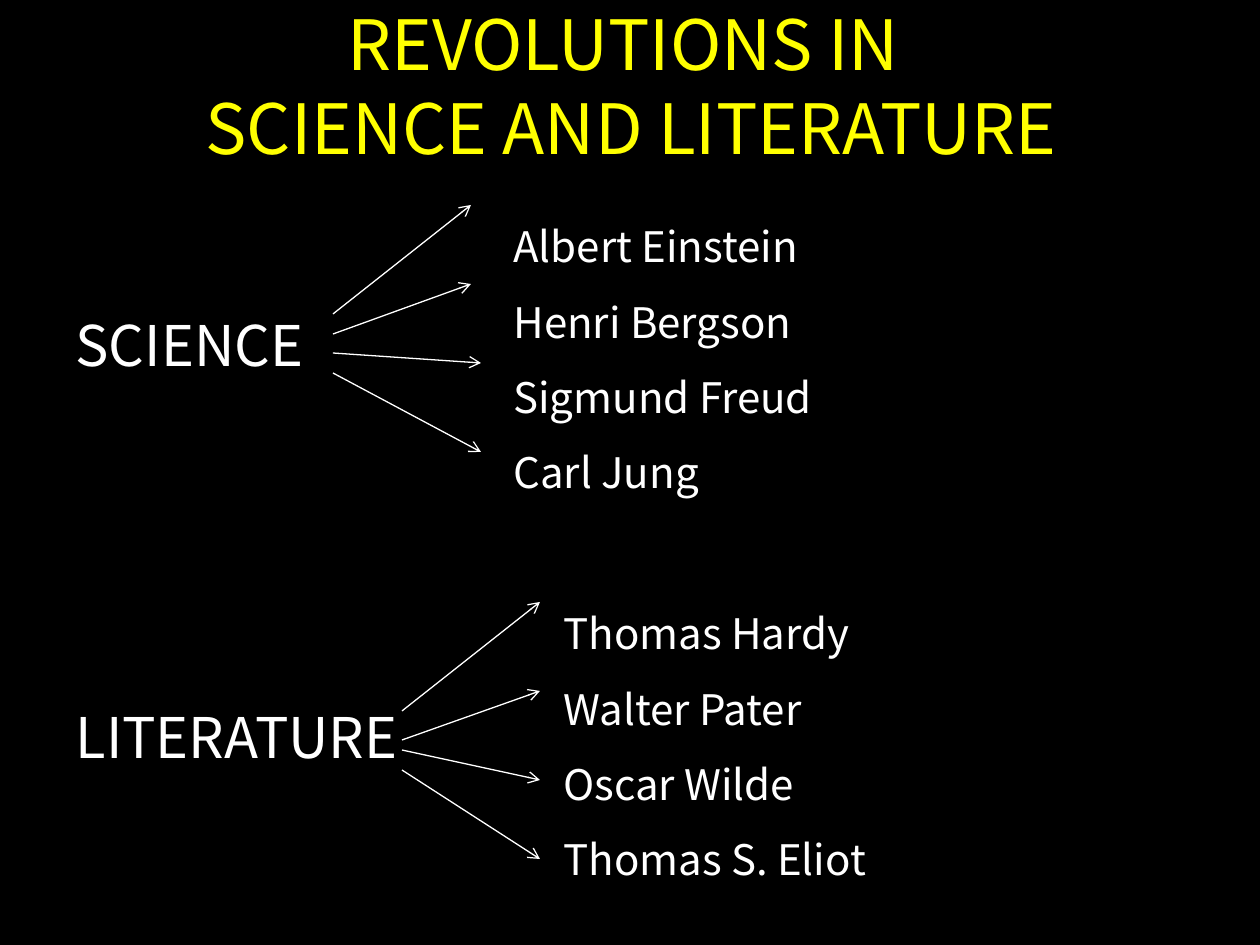
from lxml import etree
from pptx import Presentation, util as u
from pptx.dml.color import RGBColor
from pptx.enum import shapes, text
from pptx.oxml.ns import qn

FONT = "Noto Sans CJK TC"
BLACK, WHITE, YELLOW = "000000", "FFFFFF", "FFFF00"


def px(n):
    """Turn pixels (126 to the inch) into EMU."""
    return u.Emu(round(n * 914400 / 126))


def rgb(code):
    return RGBColor.from_string(code)


class Deck:
    """Holds the style and the current slide."""

    def __init__(self):
        self.prs = Presentation()
        self.prs.slide_width, self.prs.slide_height = px(1260), px(945)
        self.slide = self.prs.slides.add_slide(self.prs.slide_layouts[1])
        fill = self.slide.background.fill
        fill.solid()
        fill.fore_color.rgb = rgb(BLACK)

    def label(self, shape, lines, size, lead, top, color=WHITE):
        """Fill a shape with lines; lead is the line height in points."""
        frame = shape.text_frame
        frame.text = "\n".join(lines)
        frame.word_wrap = True
        frame.auto_size = text.MSO_AUTO_SIZE.NONE
        frame.vertical_anchor = text.MSO_ANCHOR.TOP
        frame.margin_top = px(top)
        frame.margin_bottom = 0
        for par in frame.paragraphs:
            par.font.name = FONT
            par.font.size = u.Pt(size)
            par.font.color.rgb = rgb(color)
            par.line_spacing = u.Pt(lead)
            par.space_before = u.Pt(0)
        return frame

    def place(self, shape, x, y, w, h):
        shape.left, shape.top, shape.width, shape.height = map(px, (x, y, w, h))

    def title(self, line, box):
        shape = self.slide.shapes.title
        self.place(shape, *box)
        frame = self.label(shape, [line], 39.6, 48, 0, YELLOW)
        frame.paragraphs[0].alignment = text.PP_ALIGN.CENTER

    def body(self, lines, gap, box):
        """Unbulleted headings, with gap points between them."""
        shape = self.slide.placeholders[1]
        self.place(shape, *box)
        frame = self.label(shape, lines, 32, 38, 91)
        for par in frame.paragraphs:
            props = par._p.get_or_add_pPr()
            props.set("marL", "0")
            props.set("indent", "0")
            etree.SubElement(props, qn("a:buNone"))
            # Bullet settings go ahead of the default run properties.
            props.append(props.find(qn("a:defRPr")))
        for par in frame.paragraphs[1:]:
            par.space_before = u.Pt(gap)

    def names(self, lines, box):
        shape = self.slide.shapes.add_textbox(*map(px, box))
        self.label(shape, lines, 24, 43, 11)

    def fan(self, x, rays):
        """A group of arrows; each ray is start y, end x, end y."""
        group = self.slide.shapes.add_group_shape()
        for y, tox, toy in rays:
            line = group.shapes.add_connector(
                shapes.MSO_CONNECTOR.STRAIGHT, px(x), px(y), px(tox), px(toy))
            line.line.color.rgb = rgb(WHITE)
            line.line.width = u.Pt(0.75)
            props = line._element.spPr
            etree.SubElement(props.find(qn("a:ln")),
                             qn("a:tailEnd"), type="arrow")
            etree.SubElement(props, qn("a:effectLst"))


def main():
    deck = Deck()
    deck.title("REVOLUTIONS IN \vSCIENCE AND LITERATURE", (64, 0, 1134, 157))
    deck.body(["SCIENCE", "LITERATURE"], 186, (63, 220, 1134, 624))
    deck.fan(333, [(314, 471, 205), (334, 471, 284),
                   (353, 481, 363), (373, 481, 452)])
    deck.fan(402, [(711, 540, 602), (740, 540, 691),
                   (750, 540, 780), (770, 540, 859)])
    deck.names(["Albert Einstein", "Henri Bergson", "Sigmund Freud",
                "Carl Jung"], (501, 185, 436, 317))
    deck.names(["Thomas Hardy", "Walter Pater", "Oscar Wilde",
                "Thomas S. Eliot"], (551, 572, 387, 317))
    deck.prs.save("out.pptx")


if __name__ == "__main__":
    main()
